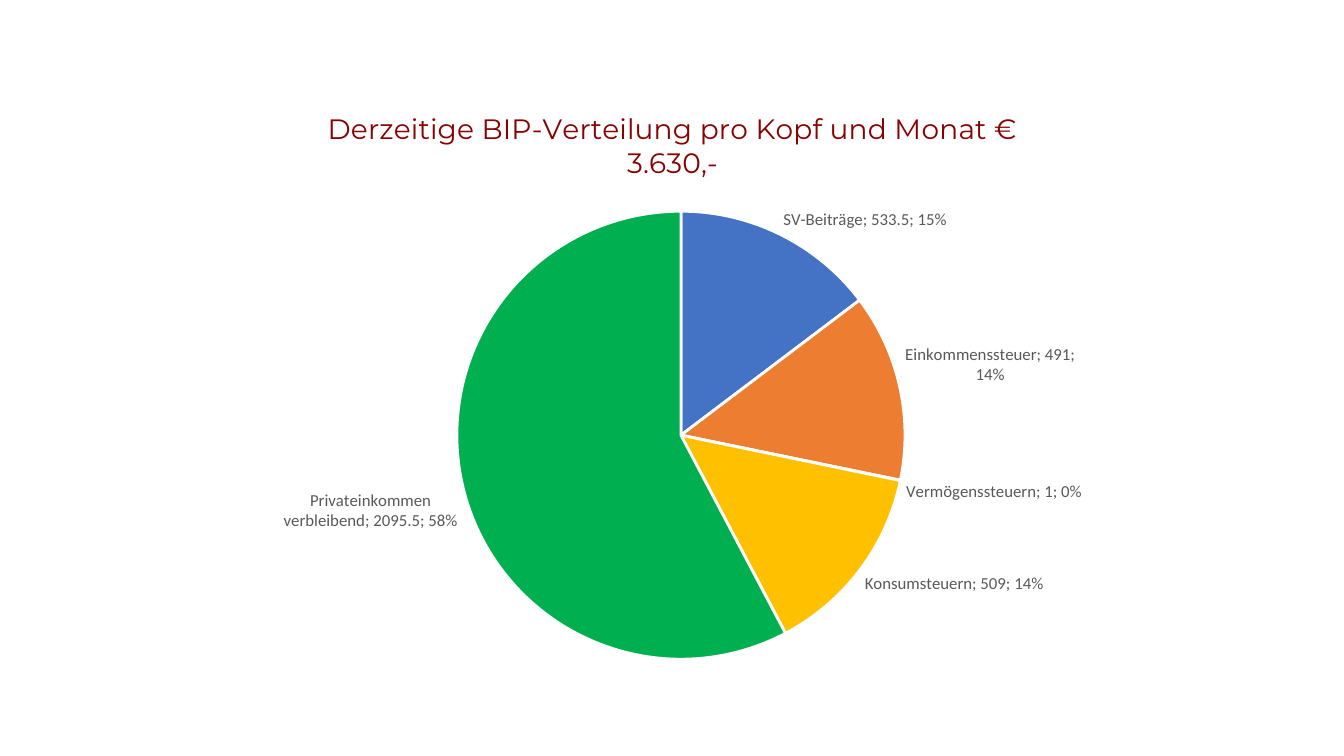
from lxml import etree
from pptx import Presentation
from pptx.chart.data import CategoryChartData
from pptx.dml.color import RGBColor
from pptx.enum.chart import XL_CHART_TYPE, XL_LABEL_POSITION
from pptx.oxml.ns import qn
from pptx.util import Inches, Pt

COLORS = {
    "title": "880000",
    "label": "595959",
    "border": "FFFFFF",
}
TITLE = "Derzeitige BIP-Verteilung pro Kopf und Monat € 3.630,-"
SHARES = [
    ("SV-Beiträge", 533.5, "4472C4"),
    ("Einkommenssteuer", 491, "ED7D31"),
    ("Vermögenssteuern", 1, "A5A5A5"),
    ("Konsumsteuern", 509, "FFC000"),
    ("Privateinkommen verbleibend", 2095.5, "00B050"),
]


def style_font(font, name, size, color):
    font.name = name
    font.size = Pt(size)
    font.bold = False
    font.color.rgb = RGBColor.from_string(color)


def place(parent, index, **settings):
    """Give a chart part a manual layout, as fractions of the chart, at a child index."""
    for old_layout in parent.findall(qn("c:layout")):
        parent.remove(old_layout)
    layout = etree.Element(qn("c:layout"))
    parent.insert(index, layout)
    manual = etree.SubElement(layout, qn("c:manualLayout"))
    for tag, value in settings.items():
        etree.SubElement(manual, qn(f"c:{tag}")).set("val", str(value))


def add_title(chart):
    chart.has_title = True
    title = chart.chart_title
    run = title.text_frame.paragraphs[0].add_run()
    run.text = TITLE
    style_font(run.font, "Montserrat", 20, COLORS["title"])
    place(title._element, 1, xMode="edge", yMode="edge", x=0.11, y=0.04)


def color_slices(series):
    for index, (_, _, color) in enumerate(SHARES):
        slice_format = series.points[index].format
        slice_format.fill.solid()
        slice_format.fill.fore_color.rgb = RGBColor.from_string(color)
        slice_format.line.color.rgb = RGBColor.from_string(COLORS["border"])
        slice_format.line.width = Pt(2)


def add_labels(series):
    labels = series.data_labels
    labels.show_category_name = True
    labels.show_value = True
    labels.show_percentage = True
    labels.position = XL_LABEL_POSITION.OUTSIDE_END
    style_font(labels.font, "Calibri", 12, COLORS["label"])
    separator = etree.Element(qn("c:separator"))
    separator.text = "; "
    labels._element.find(qn("c:showBubbleSize")).addnext(separator)


def add_income_pie(slide):
    data = CategoryChartData()
    data.categories = [name for name, _, _ in SHARES]
    data.add_series("Series 1", [value for _, value, _ in SHARES])
    chart = slide.shapes.add_chart(
        XL_CHART_TYPE.PIE, Inches(2.22), Inches(0.79), Inches(8.89), Inches(5.93), data
    ).chart
    chart.has_legend = False
    chart.font.name = "Calibri"
    chart.font.size = Pt(10)
    add_title(chart)

    plot = chart.plots[0]
    plot.vary_by_categories = True
    series = plot.series[0]
    color_slices(series)
    add_labels(series)
    plot_area = chart._chartSpace.find(f".//{qn('c:plotArea')}")
    place(plot_area, 0, layoutTarget="inner", xMode="edge", yMode="edge",
          x=0.26, y=0.22, w=0.5, h=0.75)


def main():
    presentation = Presentation()
    presentation.slide_width = Inches(13.33)
    presentation.slide_height = Inches(7.5)
    slide = presentation.slides.add_slide(presentation.slide_layouts[6])
    add_income_pie(slide)
    presentation.save("out.pptx")


if __name__ == "__main__":
    main()
